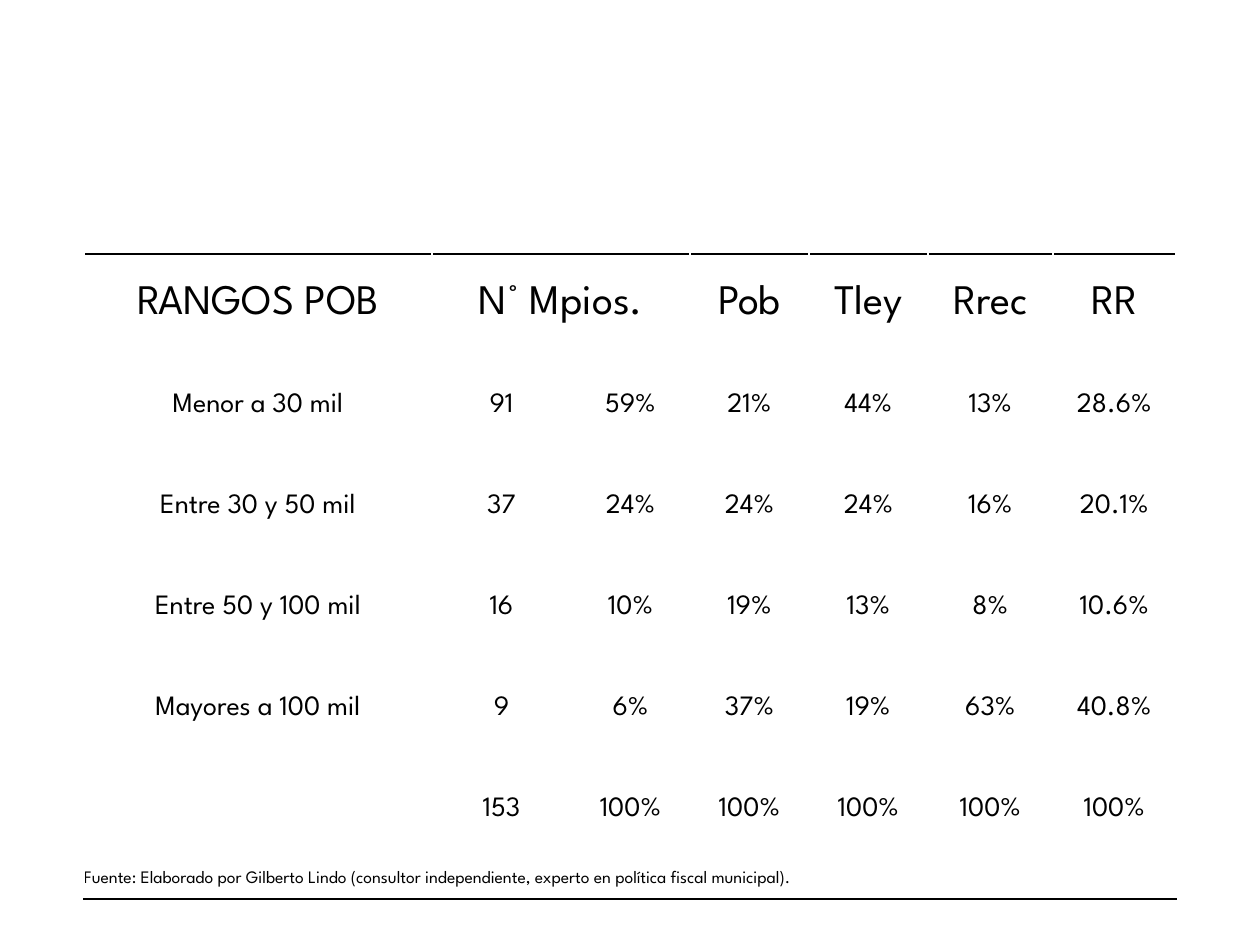
from lxml import etree
from pptx import Presentation
from pptx import util as u
from pptx.dml.color import RGBColor
from pptx.enum import text
from pptx.oxml.ns import qn

PX = 914400 / 126
BLACK = RGBColor(0, 0, 0)
FONT = "League Spartan"

COLUMN_WIDTHS = [348, 139, 119, 119, 119, 125, 123]
ROW_HEIGHTS = [101] * 6 + [39]
ROWS = [
    ["RANGOS POB", "N° Mpios.", "", "Pob", "Tley", "Rrec", "RR"],
    ["Menor a 30 mil", "91", "59%", "21%", "44%", "13%", "28.6%"],
    ["Entre 30 y 50 mil", "37", "24%", "24%", "24%", "16%", "20.1%"],
    ["Entre 50 y 100 mil", "16", "10%", "19%", "13%", "8%", "10.6%"],
    ["Mayores a 100 mil", "9", "6%", "37%", "19%", "63%", "40.8%"],
    ["", "153", "100%", "100%", "100%", "100%", "100%"],
    ["Fuente: Elaborado por Gilberto Lindo (consultor independiente, "
     "experto en política fiscal municipal).", "", "", "", "", "", ""],
]
LAST = len(ROWS) - 1
SIZES = {0: 24, LAST: 10}
BORDERS = {0: "a:lnT", LAST: "a:lnB"}


def px(value):
    return u.Emu(round(value * PX))


def add_border(cell, side):
    line = etree.Element(qn(side), w=str(u.Pt(1)))
    fill = etree.SubElement(line, qn("a:solidFill"))
    etree.SubElement(fill, qn("a:srgbClr"), val=str(BLACK))
    cell._tc.get_or_add_tcPr().insert(0, line)


deck = Presentation()
deck.slide_width, deck.slide_height = px(1260), px(945)
page = deck.slides.add_slide(deck.slide_layouts[6])

# Table grid
table = page.shapes.add_table(
    len(ROWS), len(COLUMN_WIDTHS), px(84), px(254),
    px(sum(COLUMN_WIDTHS)), px(sum(ROW_HEIGHTS))).table
table.first_row = False
table.horz_banding = False
for column, width in zip(table.columns, COLUMN_WIDTHS):
    column.width = px(width)
for row, height in zip(table.rows, ROW_HEIGHTS):
    row.height = px(height)

# Merged header and source note
table.cell(0, 1).merge(table.cell(0, 2))
table.cell(LAST, 0).merge(table.cell(LAST, len(COLUMN_WIDTHS) - 1))

# Cell contents, with rules above the header and below the note
for r, values in enumerate(ROWS):
    for c, value in enumerate(values):
        cell = table.cell(r, c)
        cell.fill.background()
        cell.margin_left = cell.margin_right = 0
        cell.margin_top = cell.margin_bottom = 0
        cell.vertical_anchor = text.MSO_ANCHOR.MIDDLE
        if r in BORDERS:
            add_border(cell, BORDERS[r])
        if not value:
            continue
        cell.text_frame.text = value
        para = cell.text_frame.paragraphs[0]
        para.alignment = text.PP_ALIGN.LEFT if r == LAST else text.PP_ALIGN.CENTER
        font = para.runs[0].font
        font.name = FONT
        font.size = u.Pt(SIZES.get(r, 16))
        font.color.rgb = BLACK

deck.save("out.pptx")
